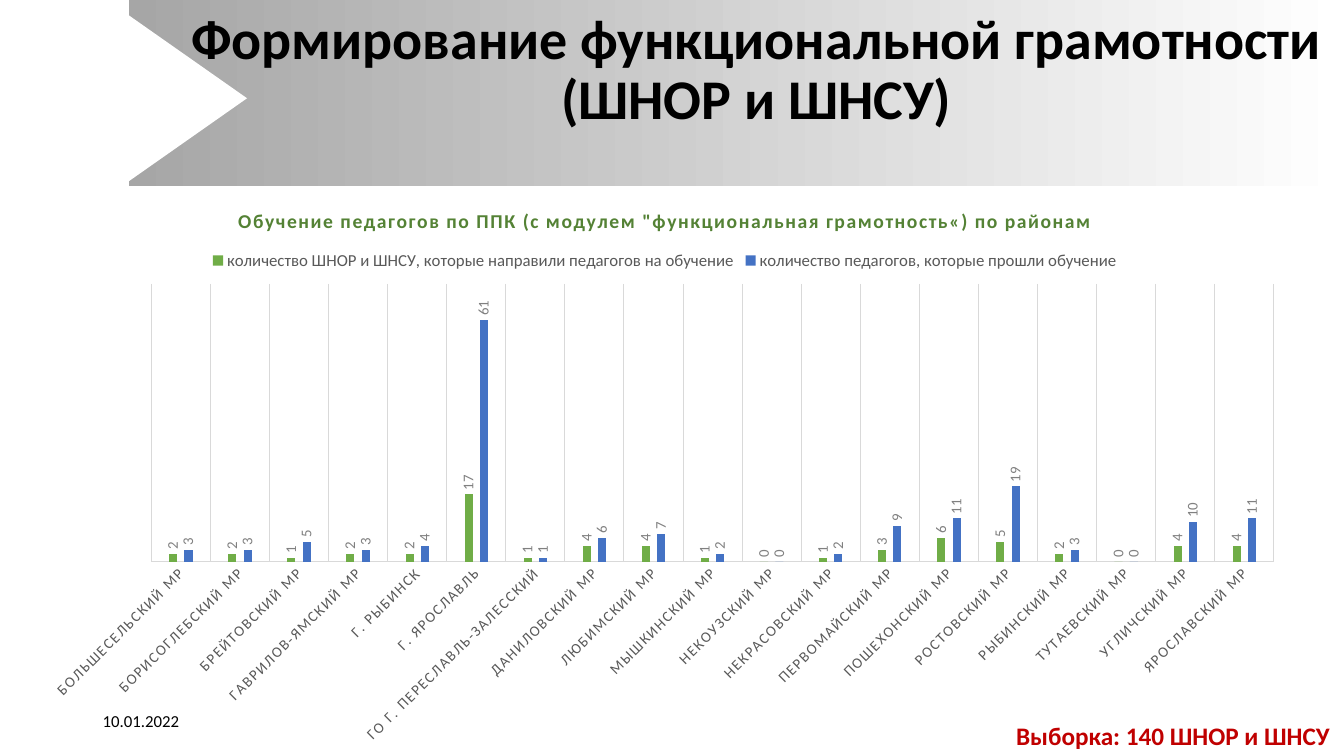
from dataclasses import dataclass

from lxml.etree import SubElement
from pptx import Presentation
from pptx.chart.data import CategoryChartData
from pptx.dml.color import RGBColor
from pptx.enum.chart import XL_CHART_TYPE, XL_LABEL_POSITION, XL_LEGEND_POSITION, XL_TICK_MARK
from pptx.enum.shapes import MSO_SHAPE
from pptx.enum.text import MSO_ANCHOR, PP_ALIGN
from pptx.oxml.ns import qn
from pptx.util import Pt

PX = 9144  # 100 px to the inch


@dataclass(frozen=True)
class Theme:
    font: str = "Calibri"
    black: str = "000000"
    white: str = "FFFFFF"
    band: str = "A6A6A6"
    grid: str = "D9D9D9"
    axis_text: str = "595959"
    label_text: str = "808080"
    chart_title: str = "548235"
    accent: str = "C00000"
    schools: str = "70AD47"
    teachers: str = "4472C4"
    title_size: float = 40
    sample_size: float = 18
    chart_title_size: float = 14
    small_size: float = 12
    label_size: float = 10.6
    chart_size: float = 10


THEME = Theme()

CHART_TITLE = 'Обучение педагогов по ППК (с модулем "функциональная грамотность«) по районам'
SCHOOLS = "количество ШНОР и ШНСУ, которые направили педагогов на обучение"
TEACHERS = "количество педагогов, которые прошли обучение"
DISTRICTS = [
    ("БОЛЬШЕСЕЛЬСКИЙ МР", 2, 3),
    ("БОРИСОГЛЕБСКИЙ МР", 2, 3),
    ("БРЕЙТОВСКИЙ МР", 1, 5),
    ("ГАВРИЛОВ-ЯМСКИЙ МР", 2, 3),
    ("Г. РЫБИНСК", 2, 4),
    ("Г. ЯРОСЛАВЛЬ", 17, 61),
    ("ГО Г. ПЕРЕСЛАВЛЬ-ЗАЛЕССКИЙ", 1, 1),
    ("ДАНИЛОВСКИЙ МР", 4, 6),
    ("ЛЮБИМСКИЙ МР", 4, 7),
    ("МЫШКИНСКИЙ МР", 1, 2),
    ("НЕКОУЗСКИЙ МР", 0, 0),
    ("НЕКРАСОВСКИЙ МР", 1, 2),
    ("ПЕРВОМАЙСКИЙ МР", 3, 9),
    ("ПОШЕХОНСКИЙ МР", 6, 11),
    ("РОСТОВСКИЙ МР", 5, 19),
    ("РЫБИНСКИЙ МР", 2, 3),
    ("ТУТАЕВСКИЙ МР", 0, 0),
    ("УГЛИЧСКИЙ МР", 4, 10),
    ("ЯРОСЛАВСКИЙ МР", 4, 11),
]


def emu(box):
    return [length * PX for length in box]


def style(font, size, color, bold=False):
    font.name = THEME.font
    font.size = Pt(size)
    font.bold = bold
    font.color.rgb = RGBColor.from_string(color)


def add_plain_shape(page, kind, box):
    shape = page.shapes.add_shape(kind, *emu(box))
    shape.shadow.inherit = False
    shape.line.fill.background()
    return shape


def add_text(page, box, text, size, color, bold=False, wrap=True, anchor=MSO_ANCHOR.MIDDLE):
    frame = page.shapes.add_textbox(*emu(box)).text_frame
    frame.word_wrap = wrap
    frame.vertical_anchor = anchor
    frame.text = text
    for span in frame.paragraphs[0].runs:
        style(span.font, size, color, bold)
    return frame


def add_header(page, box):
    left, top, width, height = box
    # Gradient band
    band = add_plain_shape(page, MSO_SHAPE.RECTANGLE, box)
    band.fill.gradient()
    band.fill.gradient_angle = 0
    for stop, color in zip(band.fill.gradient_stops, (THEME.band, THEME.white)):
        stop.color.rgb = RGBColor.from_string(color)
    # White notch
    notch = add_plain_shape(page, MSO_SHAPE.DIAMOND, (left - 118, top + 15, 235, height - 20))
    notch.fill.solid()
    notch.fill.fore_color.rgb = RGBColor.from_string(THEME.white)
    # Title, raised by its bottom inset
    frame = add_text(page, (left + 47, top + 29, width - 56, 145),
                     "Формирование функциональной грамотности\v(ШНОР и ШНСУ)",
                     THEME.title_size, THEME.black, bold=True)
    frame.margin_bottom = 66 * PX
    para = frame.paragraphs[0]
    para.alignment = PP_ALIGN.CENTER
    para.line_spacing = 0.9


def rotate(text_properties, degrees):
    body = text_properties.find(qn("a:bodyPr"))
    body.set("rot", str(degrees * 60000))
    body.set("vert", "horz")


def set_plot_area(chart, **fractions):
    area = chart._chartSpace.chart.plotArea
    layout = area.find(qn("c:layout"))
    if layout is None:
        layout = SubElement(area, qn("c:layout"))
        area.insert(0, layout)
    manual = SubElement(layout, qn("c:manualLayout"))
    settings = {"layoutTarget": "inner", "xMode": "edge", "yMode": "edge", **fractions}
    for name, value in settings.items():
        SubElement(manual, qn(f"c:{name}")).set("val", str(value))


def add_district_chart(page, box):
    names, schools, teachers = zip(*DISTRICTS)
    data = CategoryChartData()
    data.categories = names
    data.add_series(SCHOOLS, schools)
    data.add_series(TEACHERS, teachers)
    chart = page.shapes.add_chart(XL_CHART_TYPE.COLUMN_CLUSTERED, *emu(box), data).chart
    style(chart.font, THEME.chart_size, THEME.black)
    set_plot_area(chart, x=0.096, y=0.171, w=0.883, h=0.488)

    # Title and legend
    chart.has_title = True
    chart.chart_title.include_in_layout = False
    chart.chart_title.text_frame.text = CHART_TITLE
    span = chart.chart_title.text_frame.paragraphs[0].runs[0]
    style(span.font, THEME.chart_title_size, THEME.chart_title, bold=True)
    span.font._element.set("spc", "100")
    chart.has_legend = True
    chart.legend.position = XL_LEGEND_POSITION.TOP
    chart.legend.include_in_layout = False
    style(chart.legend.font, THEME.small_size, THEME.axis_text)

    # Axes
    values = chart.value_axis
    values.minimum_scale, values.maximum_scale = 0, 70
    values.has_major_gridlines = False
    values.visible = False
    districts = chart.category_axis
    districts.major_tick_mark = XL_TICK_MARK.NONE
    districts.has_major_gridlines = True
    for line in (districts.format.line, districts.major_gridlines.format.line):
        line.color.rgb = RGBColor.from_string(THEME.grid)
        line.width = Pt(0.75)
    font = districts.tick_labels.font
    style(font, THEME.label_size, THEME.axis_text)
    font._element.set("spc", "120")
    rotate(districts._element.txPr, -45)

    # Columns and their values
    plot = chart.plots[0]
    plot.vary_by_categories = False
    plot.gap_width = 444
    plot.overlap = -90
    for series, color in zip(plot.series, (THEME.schools, THEME.teachers)):
        series.format.fill.solid()
        series.format.fill.fore_color.rgb = RGBColor.from_string(color)
        labels = series.data_labels
        labels.show_value = True
        labels.position = XL_LABEL_POSITION.OUTSIDE_END
        style(labels.font, THEME.label_size, THEME.label_text)
        rotate(labels._element.find(qn("c:txPr")), -90)


def add_footer(page, box):
    left, top, width, height = box
    add_text(page, (left + width - 335, top + 15, 335, 40), "Выборка: 140 ШНОР и ШНСУ",
             THEME.sample_size, THEME.accent, bold=True, wrap=False, anchor=MSO_ANCHOR.TOP)
    add_text(page, (left + 92, top, 300, 40), "10.01.2022", THEME.small_size, THEME.black)


def main():
    deck = Presentation()
    deck.slide_width, deck.slide_height = emu((1333, 750))
    page = deck.slides.add_slide(deck.slide_layouts[6])
    add_header(page, (128, 0, 1206, 185))
    add_district_chart(page, (29, 185, 1261, 565))
    add_footer(page, (0, 695, 1333, 55))
    deck.save("out.pptx")


if __name__ == "__main__":
    main()
